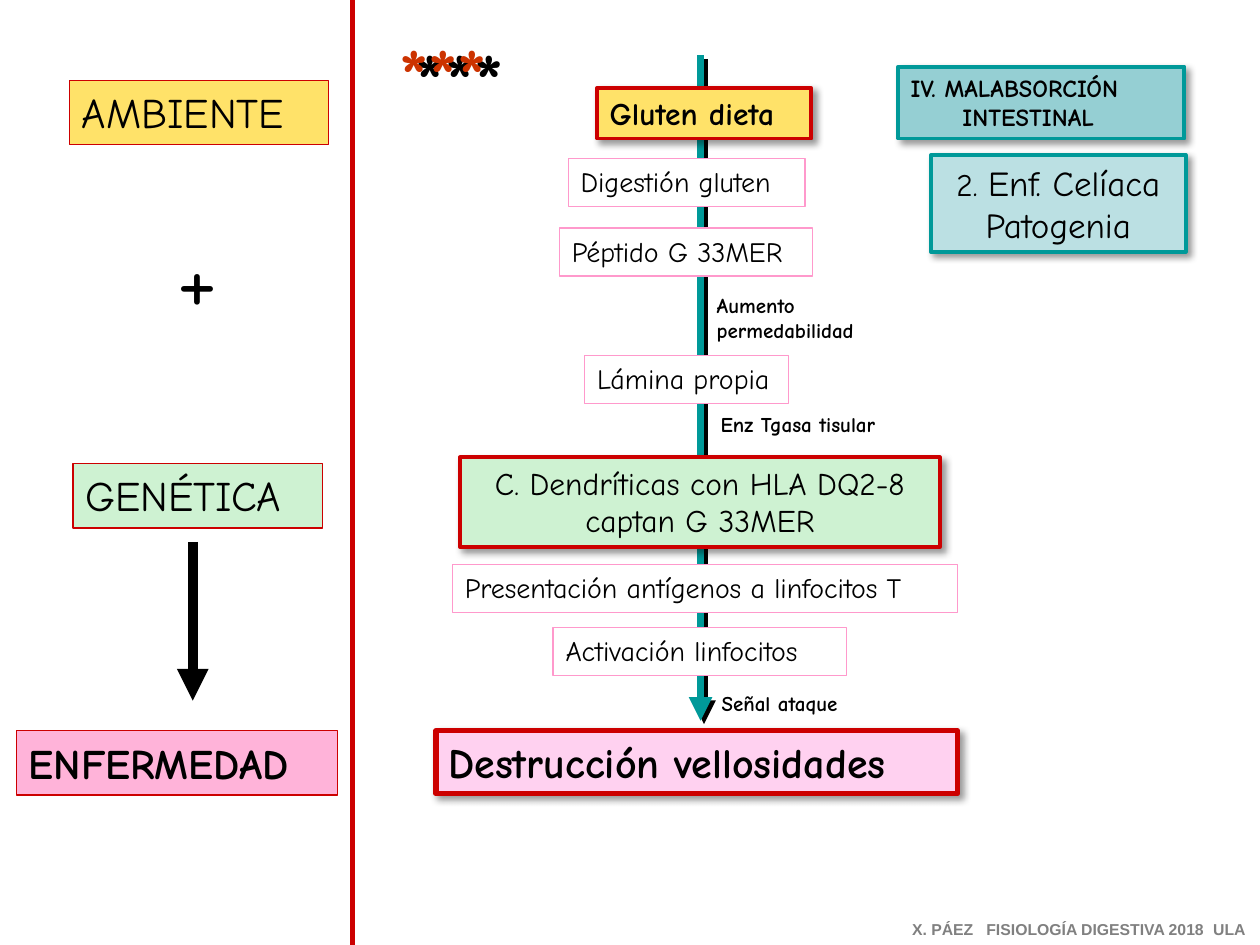
from dataclasses import dataclass
from typing import Optional

from lxml.etree import SubElement
from pptx import Presentation
from pptx.dml.color import RGBColor
from pptx.enum.shapes import MSO_CONNECTOR as Connector, MSO_SHAPE as Shape
from pptx.enum.text import MSO_ANCHOR as Anchor, MSO_AUTO_SIZE as AutoSize, PP_ALIGN as Align
from pptx.oxml.ns import qn
from pptx.util import Inches, Pt


@dataclass(frozen=True)
class Theme:
    font: str = "Comic Neue"
    footer_font: str = "Arial"
    black: str = "000000"
    white: str = "FFFFFF"
    red: str = "CC0000"
    teal: str = "009999"
    teal_mid: str = "95CFD3"
    teal_pale: str = "BBE0E3"
    yellow: str = "FFE269"
    green: str = "CEF2D2"
    pink: str = "FFB3D9"
    pink_pale: str = "FFD1F0"
    pink_line: str = "FF99CC"
    orange: str = "CC3300"
    gray: str = "808080"
    footer: int = 9
    note: int = 12
    chapter: int = 14
    step: int = 16
    key: int = 18
    topic: int = 20
    heading: int = 24
    stars: int = 44
    plus: int = 54


THEME = Theme()


@dataclass(frozen=True)
class Shadow:
    alpha: int
    blur: float
    distance: float
    angle: int = 45


SOFT = Shadow(40, 4, 3)
HARD = Shadow(100, 0, 2.8)
STAR_SHADOW = Shadow(100, 0, 10, 16)


@dataclass(frozen=True)
class Span:
    text: str
    size: int
    bold: bool = False
    color: str = THEME.black
    font: str = THEME.font


@dataclass(frozen=True)
class Para:
    spans: tuple[Span, ...]
    align: Align = Align.LEFT
    indent: float = 0
    tabs: tuple[float, ...] = ()


@dataclass(frozen=True)
class Box:
    at: tuple[float, float, float, float]
    paras: tuple[Para, ...]
    fill: Optional[str] = None
    line: str = THEME.red
    width: float = 0.75
    shadow: Optional[Shadow] = None
    wrap: bool = False


@dataclass(frozen=True)
class Line:
    start: tuple[float, float]
    end: tuple[float, float]
    color: str
    width: float
    arrow: bool = False
    shadow: Optional[Shadow] = None


def plain(text: str, size: int, bold: bool = False, align: Align = Align.LEFT,
          indent: float = 0) -> Para:
    return Para((Span(text, size, bold),), align, indent)


def rgb(color: str) -> RGBColor:
    return RGBColor.from_string(color)


def add_shadow(properties, shadow: Optional[Shadow]) -> None:
    for old in properties.findall(qn("a:effectLst")):
        properties.remove(old)
    effects = SubElement(properties, qn("a:effectLst"))
    if shadow:
        outer = SubElement(effects, qn("a:outerShdw"), blurRad=str(Pt(shadow.blur)),
                           dist=str(Pt(shadow.distance)), dir=str(shadow.angle * 60000),
                           algn="tl", rotWithShape="0")
        color = SubElement(outer, qn("a:srgbClr"), val=THEME.black)
        SubElement(color, qn("a:alpha"), val=str(shadow.alpha * 1000))


def write_para(paragraph, para: Para) -> None:
    paragraph.alignment = para.align
    properties = paragraph._p.get_or_add_pPr()
    if para.indent:
        properties.set("marL", str(Inches(para.indent)))
    if para.tabs:
        stops = SubElement(properties, qn("a:tabLst"))
        for position in para.tabs:
            SubElement(stops, qn("a:tab"), pos=str(Inches(position)), algn="l")
    for span in para.spans:
        run = paragraph.add_run()
        run.text = span.text
        run.font.size = Pt(span.size)
        run.font.name = span.font
        run.font.bold = span.bold
        run.font.color.rgb = rgb(span.color)


def draw_box(page, box: Box) -> None:
    place = [Inches(value) for value in box.at]
    if box.fill:
        shape = page.shapes.add_shape(Shape.RECTANGLE, *place)
        shape.fill.solid()
        shape.fill.fore_color.rgb = rgb(box.fill)
        shape.line.color.rgb = rgb(box.line)
        shape.line.width = Pt(box.width)
    else:
        shape = page.shapes.add_textbox(*place)
    add_shadow(shape._element.spPr, box.shadow)
    frame = shape.text_frame
    frame.word_wrap = box.wrap
    frame.auto_size = AutoSize.SHAPE_TO_FIT_TEXT
    frame.vertical_anchor = Anchor.TOP
    for index, para in enumerate(box.paras):
        write_para(frame.add_paragraph() if index else frame.paragraphs[0], para)


def draw_line(page, line: Line) -> None:
    ends = [Inches(value) for value in line.start + line.end]
    connector = page.shapes.add_connector(Connector.STRAIGHT, *ends)
    connector.line.color.rgb = rgb(line.color)
    connector.line.width = Pt(line.width)
    if line.arrow:
        SubElement(connector.line._get_or_add_ln(), qn("a:tailEnd"), type="triangle")
    add_shadow(connector._element.spPr, line.shadow)


def step(left: float, top: float, width: float, text: str) -> Box:
    return Box((left, top, width, 0.38), (plain(text, THEME.step),),
               THEME.white, THEME.pink_line)


def note(left: float, top: float, width: float, *rows: str) -> Box:
    return Box((left, top, width, 0.1 + 0.2 * len(rows)),
               tuple(plain(row, THEME.note, True) for row in rows))


def cause(left: float, top: float, width: float, text: str, fill: str,
          bold: bool = False) -> Box:
    return Box((left, top, width, 0.51), (plain(text, THEME.heading, bold),), fill)


LINES = (
    Line((1.53, 4.3), (1.53, 5.56), THEME.black, 6, True),
    Line((5.56, 0.44), (5.56, 5.72), THEME.teal, 4.5, True, HARD),
    Line((2.8, 0), (2.8, 7.5), THEME.red, 3),
)

BOXES = (
    Box((7.13, 0.53, 2.27, 0.57),
        (plain("IV. MALABSORCIÓN", THEME.chapter, True),
         plain("INTESTINAL", THEME.chapter, True, indent=0.41)),
        THEME.teal_mid, THEME.teal, 2.25, SOFT),
    cause(0.55, 0.64, 2.06, "AMBIENTE", THEME.yellow),
    cause(0.58, 3.68, 1.98, "GENÉTICA", THEME.green),
    cause(0.13, 5.8, 2.55, "ENFERMEDAD", THEME.pink, True),
    Box((1.3, 1.68, 0.56, 1), (plain("+", THEME.plus),)),
    Box((4.74, 0.7, 1.7, 0.4), (plain("Gluten dieta", THEME.key, True),),
        THEME.yellow, width=2.25, shadow=SOFT),
    step(4.51, 1.26, 1.88, "Digestión gluten"),
    step(4.44, 1.81, 2.01, "Péptido G 33MER"),
    step(4.64, 2.82, 1.62, "Lámina propia"),
    Box((3.65, 3.63, 3.81, 0.71),
        (plain("C. Dendríticas con HLA DQ2-8", THEME.key, align=Align.CENTER),
         plain("captan G 33MER", THEME.key, align=Align.CENTER)),
        THEME.green, width=2.25, shadow=SOFT),
    step(3.59, 4.48, 4.01, "Presentación antígenos a linfocitos T"),
    step(4.39, 4.98, 2.33, "Activación linfocitos"),
    Box((3.46, 5.8, 4.14, 0.5), (plain("Destrucción vellosidades", THEME.heading, True),),
        THEME.pink_pale, width=3, shadow=SOFT),
    note(5.59, 2.27, 1.4, "Aumento", "permedabilidad"),
    note(5.62, 3.22, 1.62, "Enz Tgasa tisular"),
    note(5.63, 5.43, 1.24, "Señal ataque"),
    Box((3.07, 0.16, 1.34, 0.83), (Para((Span("***", THEME.stars, True, THEME.orange),)),),
        shadow=STAR_SHADOW, wrap=True),
    Box((7.39, 1.23, 2.02, 0.77),
        (Para((Span("2. ", THEME.key), Span("Enf. Celíaca", THEME.topic)), Align.CENTER),
         plain("Patogenia", THEME.topic, align=Align.CENTER)),
        THEME.teal_pale, THEME.teal, 2.25, SOFT),
    Box((7.14, 7.25, 2.86, 0.25),
        (Para((Span("X. PÁEZ\tFISIOLOGÍA DIGESTIVA 2018\tULA", THEME.footer, True,
                    THEME.gray, THEME.footer_font),), tabs=(0.59, 2.39)),)),
)


def main() -> None:
    deck = Presentation()
    deck.slide_width, deck.slide_height = Inches(10), Inches(7.5)
    page = deck.slides.add_slide(deck.slide_layouts[6])
    for line in LINES:
        draw_line(page, line)
    for box in BOXES:
        draw_box(page, box)
    deck.save("out.pptx")


if __name__ == "__main__":
    main()
